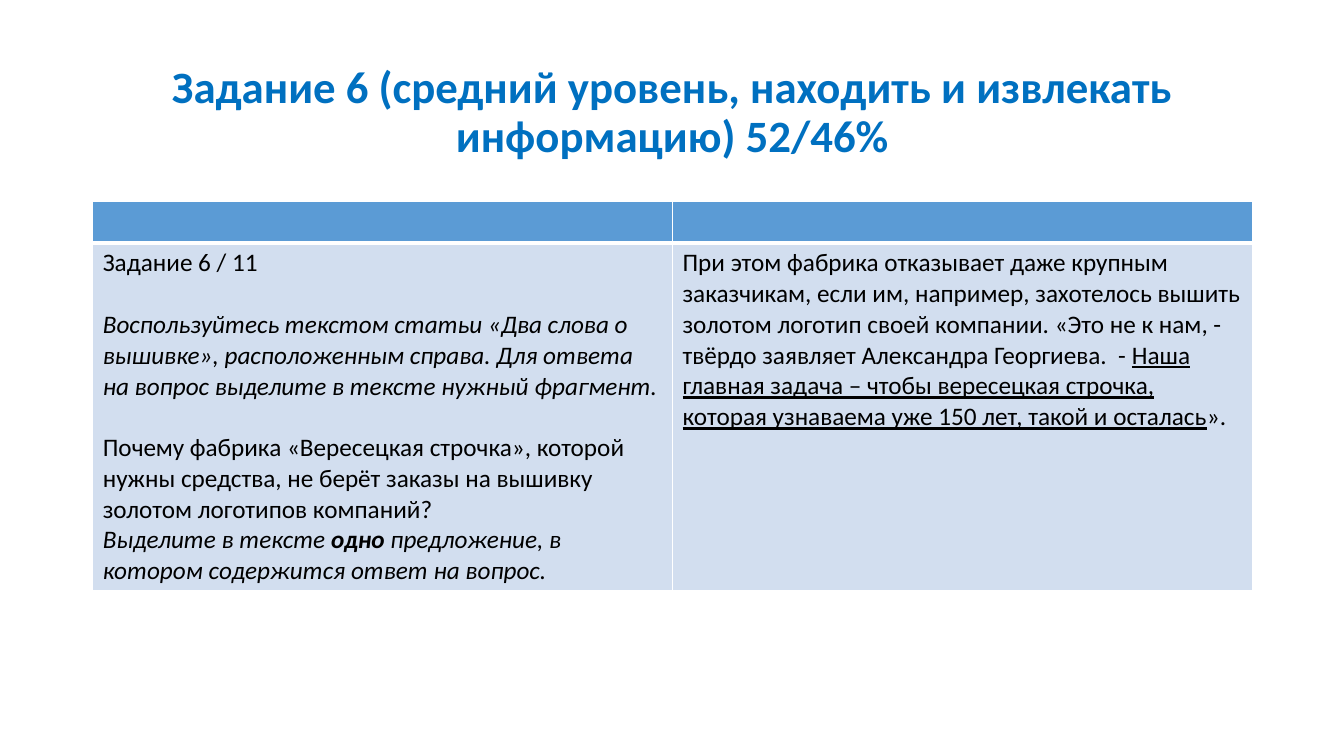
from lxml import etree
from pptx import Presentation
from pptx import util as u
from pptx.dml.color import RGBColor
from pptx.enum import text
from pptx.oxml.ns import qn

PX = 9144  # one px is a hundredth of an inch


def px(length):
    return u.Emu(length * PX)


def colour(hex_code):
    return RGBColor.from_string(hex_code)


class TaskSlide:
    FONT = "Calibri"
    TITLE, INK, WHITE = "0070C0", "000000", "FFFFFF"
    HEADER, BODY = "5B9BD5", "D2DEEF"

    def __init__(self, deck):
        self.slide = deck.slides.add_slide(deck.slide_layouts[6])

    def style(self, paragraph, size, hex_code, bold=False, italic=False):
        font = paragraph.font
        font.name, font.size = self.FONT, u.Pt(size)
        font.bold, font.italic = bold, italic
        font.color.rgb = colour(hex_code)

    def title(self, wording, left, top, width, height):
        frame = self.slide.shapes.add_textbox(
            px(left), px(top), px(width), px(height)).text_frame
        frame.word_wrap = True
        frame.vertical_anchor = text.MSO_ANCHOR.MIDDLE
        heading = frame.paragraphs[0]
        heading.text = wording
        heading.alignment = text.PP_ALIGN.CENTER
        heading.line_spacing = 0.9
        self.style(heading, 32, self.TITLE, bold=True)

    def table(self, left, top, widths, heights):
        grid = self.slide.shapes.add_table(
            len(heights), len(widths), px(left), px(top),
            px(sum(widths)), px(sum(heights))).table
        grid.first_row = grid.horz_banding = False
        for column, width in zip(grid.columns, widths):
            column.width = px(width)
        for index, height in enumerate(heights):
            grid.rows[index].height = px(height)
            for cell in grid.rows[index].cells:
                self.borders(cell, top=3 if index == 1 else 1,
                             bottom=3 if index == 0 else 1)
                cell.fill.solid()
                cell.fill.fore_color.rgb = colour(self.BODY if index else self.HEADER)
                self.style(cell.text_frame.paragraphs[0], 18, self.INK)
        return grid

    def borders(self, cell, top, bottom):
        properties = cell._tc.get_or_add_tcPr()
        for side, points in (("L", 1), ("R", 1), ("T", top), ("B", bottom)):
            line = etree.SubElement(properties, qn(f"a:ln{side}"), w=str(u.Pt(points)))
            fill = etree.SubElement(line, qn("a:solidFill"))
            etree.SubElement(fill, qn("a:srgbClr"), val=self.WHITE)

    def cell_text(self, cell, paragraphs):
        """Each paragraph is (space before, italic, [(wording, emphasis), ...])."""
        frame = cell.text_frame
        for index, (gap, italic, pieces) in enumerate(paragraphs):
            paragraph = frame.add_paragraph() if index else frame.paragraphs[0]
            self.style(paragraph, 18, self.INK, italic=italic)
            paragraph.space_before = u.Pt(gap)
            for wording, emphasis in pieces:
                run = paragraph.add_run()
                run.text = wording
                if emphasis:
                    setattr(run.font, emphasis, True)


def main():
    deck = Presentation()
    deck.slide_width, deck.slide_height = px(1333), px(750)
    task = TaskSlide(deck)

    # Heading
    task.title("Задание 6 (средний уровень, находить и извлекать информацию) 52/46%",
               92, 40, 1150, 145)

    # Question and answer side by side
    grid = task.table(92, 200, [575, 575], [41, 345])
    line_gap = 22
    question = [
        (0, False, [("Задание 6 / 11", None)]),
        (line_gap, True, [("Воспользуйтесь текстом статьи «Два слова о вышивке», "
                           "расположенным справа. Для ответа на вопрос выделите "
                           "в тексте нужный фрагмент.", None)]),
        (line_gap, False, [("Почему фабрика «Вересецкая строчка», которой нужны "
                            "средства, не берёт заказы на вышивку золотом "
                            "логотипов компаний?", None)]),
        (0, True, [("Выделите в тексте ", None), ("одно", "bold"),
                   (" предложение, в котором содержится ответ на вопрос.", None)]),
    ]
    answer = [
        (0, False, [("При этом фабрика отказывает даже крупным заказчикам, если им, "
                     "например, захотелось вышить золотом логотип своей компании. "
                     "«Это не к нам, - твёрдо заявляет Александра Георгиева.  - ", None),
                    ("Наша главная задача – чтобы вересецкая строчка, которая "
                     "узнаваема уже 150 лет, такой и осталась", "underline"),
                    ("».", None)]),
    ]
    task.cell_text(grid.cell(1, 0), question)
    task.cell_text(grid.cell(1, 1), answer)

    deck.save("out.pptx")


if __name__ == "__main__":
    main()
